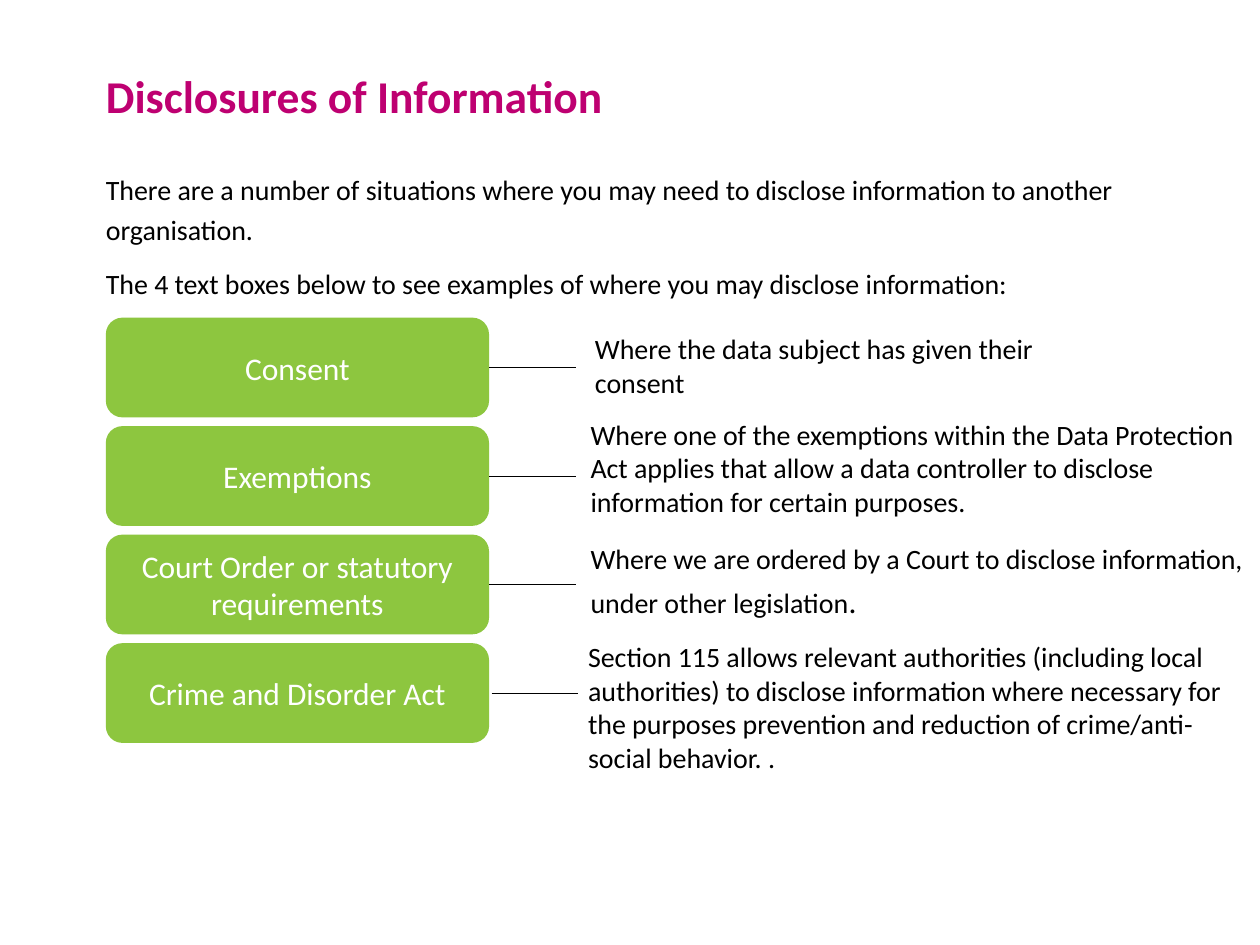
import dataclasses
import typing

import lxml.etree
import pptx
import pptx.dml.color
import pptx.enum.shapes
import pptx.enum.text
import pptx.oxml.ns
import pptx.util

Pt = pptx.util.Pt
ALIGN = pptx.enum.text.PP_ALIGN
ANCHOR = pptx.enum.text.MSO_ANCHOR
AUTO_SIZE = pptx.enum.text.MSO_AUTO_SIZE

COLOURS = {"heading": "BE0071", "text": "000000", "button": "8DC63F", "label": "FFFFFF"}
MARGIN = 60.5
BUTTON_TOP = 181.5
BUTTON_PITCH = 62
BUTTON_WIDTH = 219
BUTTON_HEIGHT = 57
LINE_LENGTH = 49.5


@dataclasses.dataclass
class Example:
    label: str
    description: str
    left: float
    top: float
    width: float
    height: float
    line_gap: float = 0
    insets: tuple = (0, 0)
    auto_size: typing.Any = AUTO_SIZE.NONE
    line_spacing: float = 1.0
    ending: str = ""


EXAMPLES = [
    Example("Consent", "Where the data subject has given their consent", 340, 189.5, 253.5, 41),
    Example(
        "Exemptions",
        "Where one of the exemptions within the Data Protection Act applies that allow "
        "a data controller to disclose information for certain purposes.",
        337.5, 238.5, 379.5, 72.5,
    ),
    Example(
        "Court Order or statutory requirements",
        "Where we are ordered by a Court to disclose information, under other legislation",
        337.5, 305.5, 379.5, 73.5, line_spacing=1.2, ending=".",
    ),
    Example(
        "Crime and Disorder Act",
        "Section 115 allows relevant authorities (including local authorities) to disclose "
        "information where necessary for the purposes prevention and reduction of "
        "crime/anti-social behavior. .",
        329, 362, 388, 85, line_gap=1.5, insets=(7.2, 3.6), auto_size=AUTO_SIZE.SHAPE_TO_FIT_TEXT,
    ),
]


def colour(name: str) -> pptx.dml.color.RGBColor:
    return pptx.dml.color.RGBColor.from_string(COLOURS[name])


def apply(target: typing.Any, values: dict) -> None:
    for name, value in values.items():
        setattr(target, name, value)


def place(box: typing.Any, left: float, top: float, width: float, height: float) -> None:
    apply(box, {"left": Pt(left), "top": Pt(top), "width": Pt(width), "height": Pt(height)})


def format_frame(frame: typing.Any, insets: tuple = (0, 0), auto_size: typing.Any = AUTO_SIZE.NONE) -> None:
    side, end = map(Pt, insets)
    apply(frame, {
        "margin_left": side, "margin_right": side, "margin_top": end, "margin_bottom": end,
        "word_wrap": True, "auto_size": auto_size, "vertical_anchor": ANCHOR.TOP,
    })


def add_text(para: typing.Any, text: str, size: float, colour_name: str = "text", bold: bool = False) -> None:
    span = para.add_run()
    span.text = text
    apply(span.font, {"name": "Calibri", "size": Pt(size), "bold": bold})
    span.font.color.rgb = colour(colour_name)


def add_heading(page: typing.Any) -> None:
    box = page.shapes.title
    place(box, MARGIN, 39, 384.5, 29)
    format_frame(box.text_frame)
    para = box.text_frame.paragraphs[0]
    para.alignment = ALIGN.LEFT
    add_text(para, "Disclosures of Information", 26, "heading", True)


def add_introduction(page: typing.Any, lines: list[str]) -> None:
    box = page.placeholders[1]
    place(box, MARGIN, 94.5, 603.5, 84)
    format_frame(box.text_frame)
    for index, line in enumerate(lines):
        para = box.text_frame.add_paragraph() if index else box.text_frame.paragraphs[0]
        properties = para._p.get_or_add_pPr()
        properties.set("marL", "0")
        properties.set("indent", "0")
        lxml.etree.SubElement(properties, pptx.oxml.ns.qn("a:buNone"))
        apply(para, {"line_spacing": 1.2, "space_before": Pt(8 if index else 0)})
        add_text(para, line, 16)


def add_button(page: typing.Any, label: str, top: float) -> typing.Any:
    button = page.shapes.add_shape(
        pptx.enum.shapes.MSO_SHAPE.ROUNDED_RECTANGLE,
        Pt(MARGIN), Pt(top), Pt(BUTTON_WIDTH), Pt(BUTTON_HEIGHT),
    )
    button.shadow.inherit = False
    button.fill.solid()
    button.fill.fore_color.rgb = colour("button")
    button.line.fill.background()
    apply(button.text_frame, {"word_wrap": True, "vertical_anchor": ANCHOR.MIDDLE})
    para = button.text_frame.paragraphs[0]
    para.alignment = ALIGN.CENTER
    add_text(para, label, 18, "label")
    return button


def add_line(page: typing.Any, button: typing.Any, gap: float) -> None:
    start = button.left + button.width + Pt(gap)
    middle = button.top + button.height // 2
    line = page.shapes.add_connector(
        pptx.enum.shapes.MSO_CONNECTOR.STRAIGHT, start, middle, start + Pt(LINE_LENGTH), middle
    )
    if not gap:
        line.begin_connect(button, 3)
    line.line.width = Pt(0.5)
    line.line.color.rgb = colour("text")
    lxml.etree.SubElement(line._element.spPr, pptx.oxml.ns.qn("a:effectLst"))


def add_description(page: typing.Any, example: Example) -> None:
    box = page.shapes.add_textbox(
        Pt(example.left), Pt(example.top), Pt(example.width), Pt(example.height)
    )
    format_frame(box.text_frame, example.insets, example.auto_size)
    para = box.text_frame.paragraphs[0]
    para.line_spacing = example.line_spacing
    add_text(para, example.description, 16)
    if example.ending:
        add_text(para, example.ending, 18)


def main() -> None:
    deck = pptx.Presentation()
    apply(deck, {"slide_width": Pt(720), "slide_height": Pt(540)})
    page = deck.slides.add_slide(deck.slide_layouts[1])
    add_heading(page)
    add_introduction(page, [
        "There are a number of situations where you may need to disclose information to another organisation.",
        "The 4 text boxes below to see examples of where you may disclose information:",
    ])
    for index, example in enumerate(EXAMPLES):
        button = add_button(page, example.label, BUTTON_TOP + index * BUTTON_PITCH)
        add_line(page, button, example.line_gap)
        add_description(page, example)
    deck.save("out.pptx")


if __name__ == "__main__":
    main()
